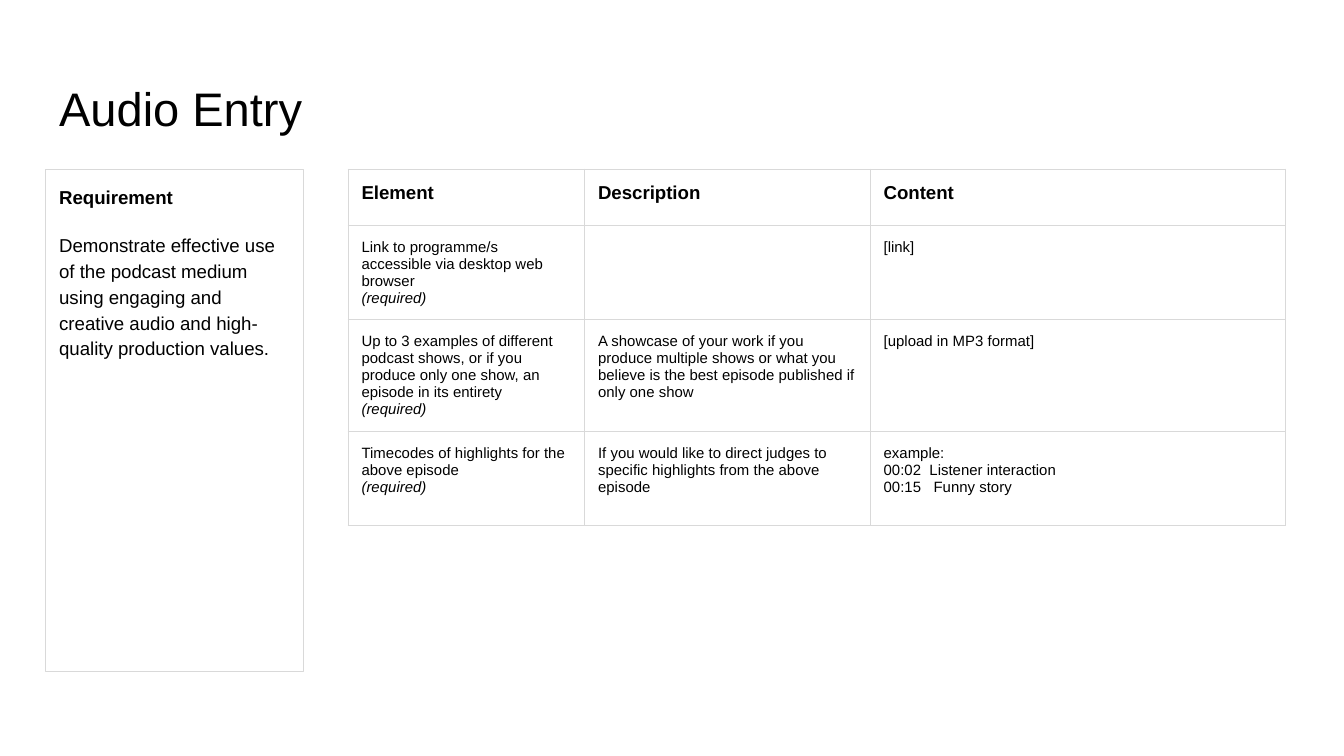
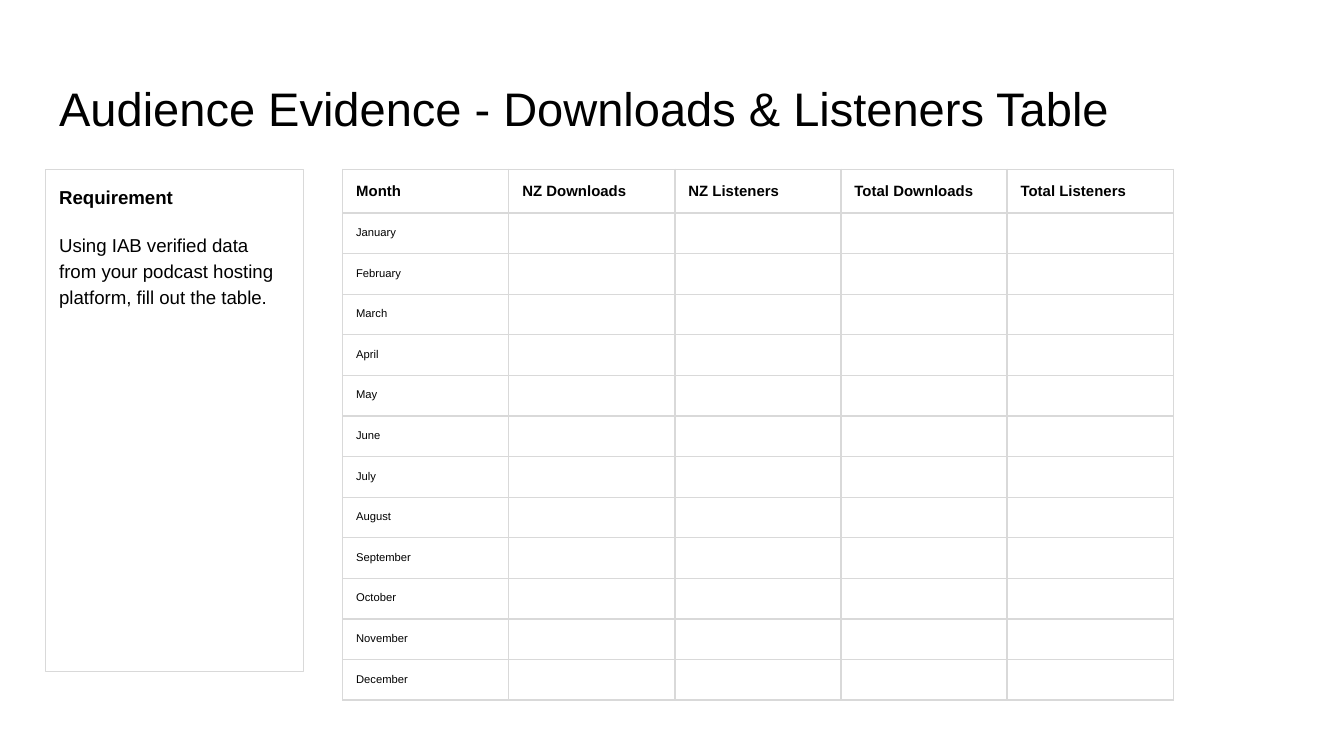
"""Build the podcast award entry slides: audio entry and audience evidence."""
from lxml.etree import SubElement
from pptx import Presentation
from pptx.dml.color import RGBColor
from pptx.enum.text import MSO_ANCHOR, MSO_AUTO_SIZE, PP_ALIGN
from pptx.oxml.ns import qn
from pptx.util import Inches, Pt

BLACK = RGBColor(0x00, 0x00, 0x00)
GREY = RGBColor(0xD9, 0xD9, 0xD9)
FONT = "Arial"
WIDTH, HEIGHT = Inches(10), Inches(5.625)
COLUMN, ROW = WIDTH / 100, HEIGHT / 100
LEFT, TOP = 3.4, 22.4
INSET = Inches(0.1)

MONTHS = ["January", "February", "March", "April", "May", "June", "July",
          "August", "September", "October", "November", "December"]

SLIDES = [
    {
        "title": "Audio Entry",
        "requirement": "Demonstrate effective use of the podcast medium using engaging "
                       "and creative audio and high-quality production values.",
        "left": 25.9,
        "columns": [17.6, 21.25, 30.9],
        "rows": [7.45, 12.45, 14.75, 12.45],
        "sizes": (10, 8),
        "cells": [
            ["Element", "Description", "Content"],
            ["Link to programme/s accessible via desktop web browser\v(required)", "", "[link]"],
            ["Up to 3 examples of different podcast shows, or if you produce only one show, "
             "an episode in its entirety\v(required)",
             "A showcase of your work if you produce multiple shows or what you believe is "
             "the best episode published if only one show",
             "[upload in MP3 format]"],
            ["Timecodes of highlights for the above episode\v(required)",
             "If you would like to direct judges to specific highlights from the above episode",
             "example:\n00:02  Listener interaction\n00:15   Funny story"],
        ],
    },
    {
        "title": "Audience Evidence - Downloads & Listeners Table",
        "requirement": "Using IAB verified data from your podcast hosting platform, "
                       "fill out the table.",
        "left": 25.5,
        "columns": [12.36] * 5,
        "rows": [5.75] + [5.22] * len(MONTHS),
        "sizes": (8, 6),
        "cells": [["Month", "NZ Downloads", "NZ Listeners", "Total Downloads", "Total Listeners"]]
                 + [[month, "", "", "", ""] for month in MONTHS],
    },
]


def format_text(para, size, bold=False):
    para.alignment = PP_ALIGN.LEFT
    for span in para.runs:
        span.font.name, span.font.size, span.font.bold = FONT, Pt(size), bold
        span.font.italic = span.text == "(required)"
        span.font.color.rgb = BLACK
    if not para.runs:
        SubElement(para._p, qn("a:endParaRPr"), sz=str(size * 100))


def place(box, left, top, width, height):
    box.left, box.top = round(left * COLUMN), round(top * ROW)
    box.width, box.height = round(width * COLUMN), round(height * ROW)
    frame = box.text_frame
    frame.auto_size, frame.word_wrap = MSO_AUTO_SIZE.NONE, True
    frame.margin_left = frame.margin_right = INSET
    frame.margin_top = frame.margin_bottom = INSET
    return frame


deck = Presentation()
deck.slide_width, deck.slide_height = WIDTH, HEIGHT

for content in SLIDES:
    page = deck.slides.add_slide(deck.slide_layouts[1])

    title = place(page.shapes.title, LEFT, 8.65, 93.2, 11.15)
    title.text = content["title"]
    title.vertical_anchor = MSO_ANCHOR.BOTTOM
    format_text(title.paragraphs[0], 25.2)

    panel = page.placeholders[1]
    requirement = place(panel, LEFT, TOP, 19.2, 66.4)
    requirement.text = "Requirement\n" + content["requirement"]
    requirement.vertical_anchor = MSO_ANCHOR.TOP
    panel.line.color.rgb, panel.line.width = GREY, Pt(0.75)
    for para, bold, gap in zip(requirement.paragraphs, (True, False), (0, 12)):
        para.line_spacing = 1.15
        para.space_before = para.space_after = Pt(gap)
        format_text(para, 10, bold)
        properties = para._p.get_or_add_pPr()
        properties.set("marL", "0")
        properties.set("indent", "0")
        SubElement(properties, qn("a:buNone"))

    widths, heights = content["columns"], content["rows"]
    table = page.shapes.add_table(
        len(heights), len(widths), round(content["left"] * COLUMN), round(TOP * ROW),
        round(sum(widths) * COLUMN), round(sum(heights) * ROW)).table
    table.first_row = table.horz_banding = False
    for column, width in zip(table.columns, widths):
        column.width = round(width * COLUMN)
    for index, (row, height, texts) in enumerate(zip(table.rows, heights, content["cells"])):
        row.height = round(height * ROW)
        heading = index == 0
        for cell, text in zip(row.cells, texts):
            cell.text_frame.text = text
            cell.margin_left = cell.margin_right = INSET
            cell.margin_top = cell.margin_bottom = INSET
            for para in cell.text_frame.paragraphs:
                format_text(para, content["sizes"][0 if heading else 1], heading)
            properties = cell._tc.get_or_add_tcPr()
            for side in ("lnL", "lnR", "lnT", "lnB"):
                border = SubElement(properties, qn(f"a:{side}"), w=str(Pt(0.75)))
                fill = SubElement(border, qn("a:solidFill"))
                SubElement(fill, qn("a:srgbClr"), val=str(GREY))
            cell.fill.background()

deck.save("out.pptx")
